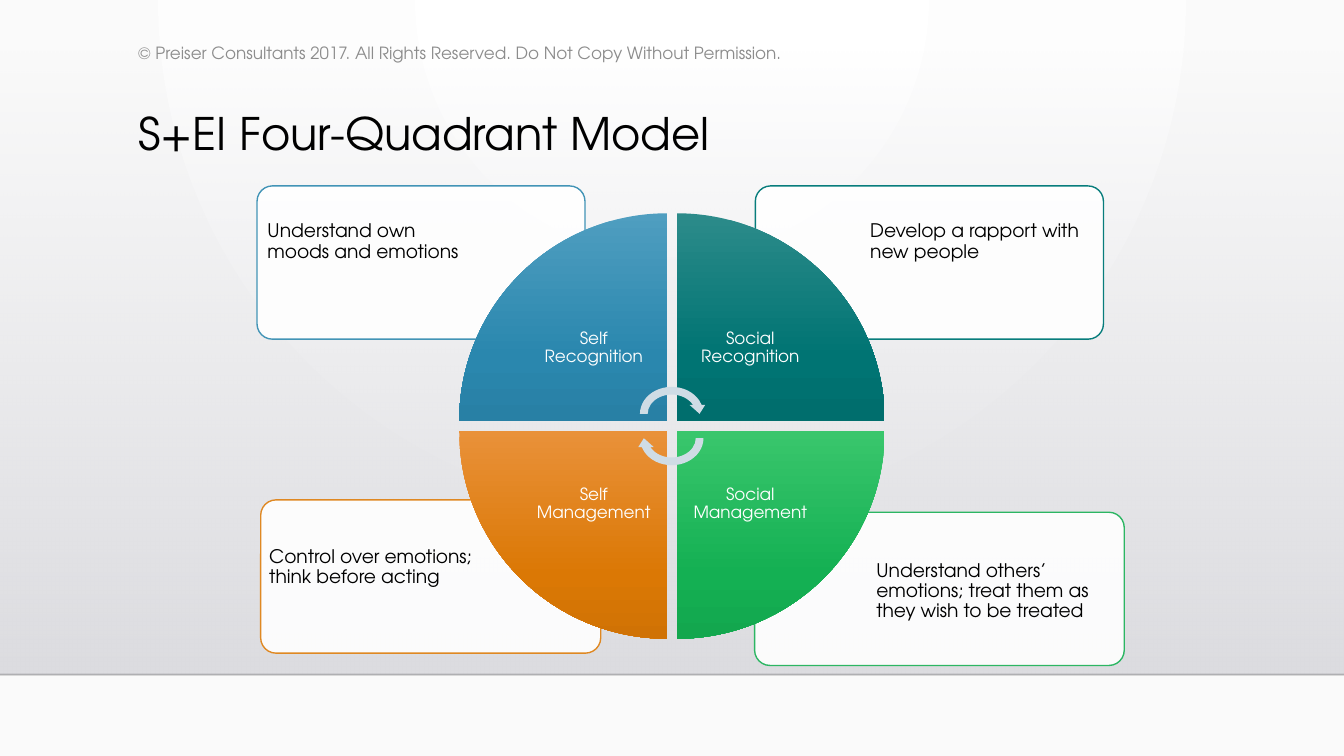
import lxml.etree
import pptx
import pptx.dml.color
import pptx.enum.shapes
import pptx.enum.text
import pptx.oxml
import pptx.oxml.ns
import pptx.util

THEME = {
    "font": "TeX Gyre Adventor",
    "title_size": 24, "card_size": 10, "small_size": 9,
    "black": "000000", "white": "FFFFFF", "grey": "8C8C8C", "arrow": "CFDCE5",
    "backdrop": [(0, "FFFFFF", 100), (100, "FAFAFA", 100)],
    "panel": [(0, "DCDCE0", 0), (100, "DEDEE2", 100)],
    "card": [(0, "FFFFFF", 90)],
}
SHAPE = pptx.enum.shapes.MSO_SHAPE
ALIGN = pptx.enum.text.PP_ALIGN
ANCHOR = pptx.enum.text.MSO_ANCHOR
RGB = pptx.dml.color.RGBColor.from_string

# Widescreen slide, 16:9
deck = pptx.Presentation()
deck.slide_width = pptx.util.Inches(10)
deck.slide_height = deck.slide_width * 9 // 16
slide = deck.slides.add_slide(deck.slide_layouts[5])
UNIT = deck.slide_width / 100  # square grid, 100 columns across


def paint(stops, direction='<a:lin ang="5400000" scaled="0"/>'):
    """Fill element: solid for one stop, gradient for several."""
    colors = [f'<a:srgbClr val="{color}"><a:alpha val="{alpha * 1000}"/></a:srgbClr>'
              for _, color, alpha in stops]
    ns = pptx.oxml.ns.nsdecls("a")
    if len(stops) == 1:
        return pptx.oxml.parse_xml(f"<a:solidFill {ns}>{colors[0]}</a:solidFill>")
    marks = "".join(f'<a:gs pos="{stop[0] * 1000}">{color}</a:gs>'
                    for stop, color in zip(stops, colors))
    return pptx.oxml.parse_xml(
        f'<a:gradFill {ns} rotWithShape="0"><a:gsLst>{marks}</a:gsLst>{direction}</a:gradFill>')


def draw(kind, box, stops, rotation=0, outline=None):
    """Preset shape placed on the grid."""
    shape = slide.shapes.add_shape(kind, *(round(v * UNIT) for v in box))
    shape.shadow.inherit = False
    shape.rotation = rotation
    shape._element.spPr.find(pptx.oxml.ns.qn("a:prstGeom")).addnext(paint(stops))
    if outline:
        shape.line.color.rgb = RGB(outline)
        shape.line.width = pptx.util.Pt(0.75)
    else:
        shape.line.fill.background()
    return shape


# Background, grey panel and floor line
slide.background.fill.solid()
plain_fill = slide._element.find(".//" + pptx.oxml.ns.qn("p:bgPr"))[0]
plain_fill.getparent().replace(plain_fill, paint(
    THEME["backdrop"],
    '<a:path path="circle"><a:fillToRect l="43000" t="0" r="43000" b="100000"/></a:path>'))
draw(SHAPE.RECTANGLE, (0, 3.8, 100, 46.4), THEME["panel"])
floor = slide.shapes.add_connector(
    pptx.enum.shapes.MSO_CONNECTOR.STRAIGHT,
    0, round(50.2 * UNIT), deck.slide_width, round(50.2 * UNIT))
floor.line.color.rgb = RGB(THEME["black"])
floor.line.width = pptx.util.Pt(1)
floor_color = floor._element.find(".//" + pptx.oxml.ns.qn("a:srgbClr"))
lxml.etree.SubElement(floor_color, pptx.oxml.ns.qn("a:alpha"), val="20000")
lxml.etree.SubElement(floor._element.spPr, pptx.oxml.ns.qn("a:effectLst"))

# Title placeholder, brought in front of the panel
title = slide.shapes.title
title.left, title.top, title.width, title.height = (
    round(v * UNIT) for v in (9.3, 7.8, 78.8, 8.6))
slide.shapes._spTree.append(title._element)

# Each quadrant: column, row, wedge turn, label, wedge gradient,
# card outline, card box, card text, text box, text insets (side, top)
quadrants = [
    (0, 0, 0, "Self Recognition", ("4F9EC0", "2A87AE", "2880A5"), "4294B6",
     (19.13, 13.84, 24.4, 11.4), "Understand own moods and emotions",
     (19.4, 14.1, 16.6, 8.1), (0.5, 2.4)),
    (1, 0, 90, "Social Recognition", ("2C8B8A", "007473", "006E6D"), "087D7C",
     (56.2, 13.84, 25.9, 11.4), "Develop a rapport with new people",
     (64.25, 14.1, 17.6, 8.1), (0.5, 2.4)),
    (1, 1, 180, "Social Management", ("39C66C", "14B053", "13A74E"), "2CB663",
     (56.15, 38.12, 27.5, 11.4),
     "Understand others’ emotions; treat them as they wish to be treated",
     (64.7, 41.25, 18.8, 8.1), (0.5, 0.5)),
    (0, 1, 270, "Self Management", ("E99139", "DB7805", "D07205"), "DF8822",
     (19.4, 37.2, 25.3, 11.4), "Control over emotions; think before acting",
     (19.63, 40.33, 17.2, 8.1), (0.4, 0.4)),
]
CENTER_X, CENTER_Y, GAP, RADIUS, LABEL = 50, 31.7, 0.75, 15.45, 10.9

# Cards behind the circle
for *_, outline, card_box, _, _, _ in quadrants:
    card = draw(SHAPE.ROUNDED_RECTANGLE, card_box, THEME["card"], outline=outline)
    card.adjustments[0] = 0.1

# Wedges, and the wording of labels and cards:
# frame, text, size, colour, alignment, anchor, line spacing, insets
wording = [
    (title, "S+EI Four-Quadrant Model", THEME["title_size"], THEME["black"],
     ALIGN.LEFT, ANCHOR.TOP, 0.9, (1, 0.5)),
    ((9.3, 2.65, 51.1, 2.6),
     "© Preiser Consultants 2017. All Rights Reserved. Do Not Copy Without Permission.",
     THEME["small_size"], THEME["grey"], ALIGN.LEFT, ANCHOR.MIDDLE, 1, (1, 0.5)),
]
for column, row, turn, label, shades, _, _, advice, advice_box, insets in quadrants:
    wedge_box, label_box = (
        (CENTER_X + (GAP / 2 if column else -GAP / 2 - side),
         CENTER_Y + (GAP / 2 if row else -GAP / 2 - side), side, side)
        for side in (RADIUS, LABEL))
    draw(SHAPE.PIE_WEDGE, wedge_box,
         [(pos, shade, 100) for pos, shade in zip((0, 69, 100), shades)], turn)
    wording.append((label_box, label, THEME["small_size"], THEME["white"],
                    ALIGN.CENTER, ANCHOR.MIDDLE, 0.9, (0.7, 0.7)))
    wording.append((advice_box, advice, THEME["card_size"], THEME["black"],
                    ALIGN.LEFT, ANCHOR.TOP, 0.9, insets))

# Cycle arrows in the middle
for top, turn in ((28.5, 0), (30.3, 180)):
    draw(SHAPE.CIRCULAR_ARROW, (47.33, top, 5.3, 4.6), [(0, THEME["arrow"], 100)], turn)

# All text
for place, text, size, color, align, anchor, spacing, (side, top) in wording:
    holder = place if place is title else slide.shapes.add_textbox(
        *(round(v * UNIT) for v in place))
    frame = holder.text_frame
    frame.word_wrap = True
    frame.auto_size = pptx.enum.text.MSO_AUTO_SIZE.NONE
    frame.vertical_anchor = anchor
    frame.margin_left = frame.margin_right = round(side * UNIT)
    frame.margin_top = round(top * UNIT)
    frame.margin_bottom = round(min(side, top) * UNIT)
    paragraph = frame.paragraphs[0]
    paragraph.alignment = align
    paragraph.line_spacing = spacing
    run = paragraph.add_run()
    run.text = text
    run.font.name = THEME["font"]
    run.font.size = pptx.util.Pt(size)
    run.font.color.rgb = RGB(color)

deck.save("out.pptx")
